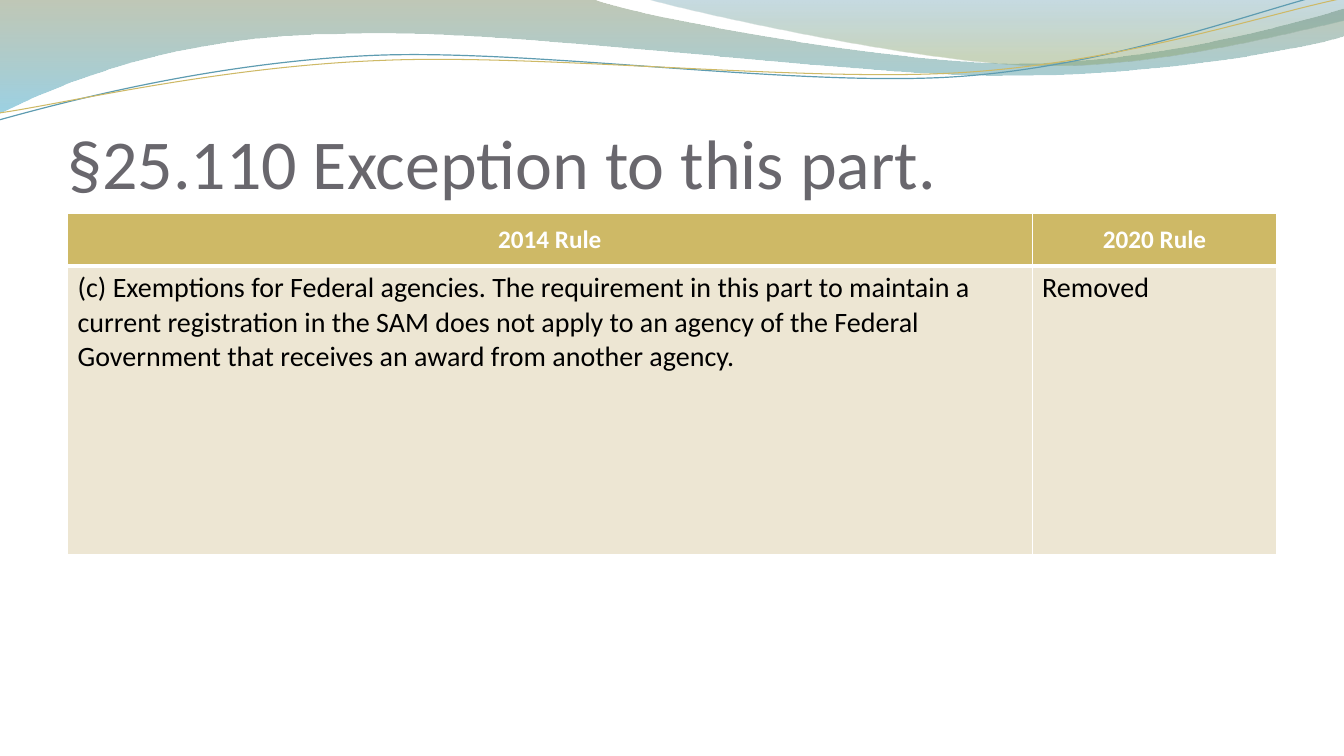
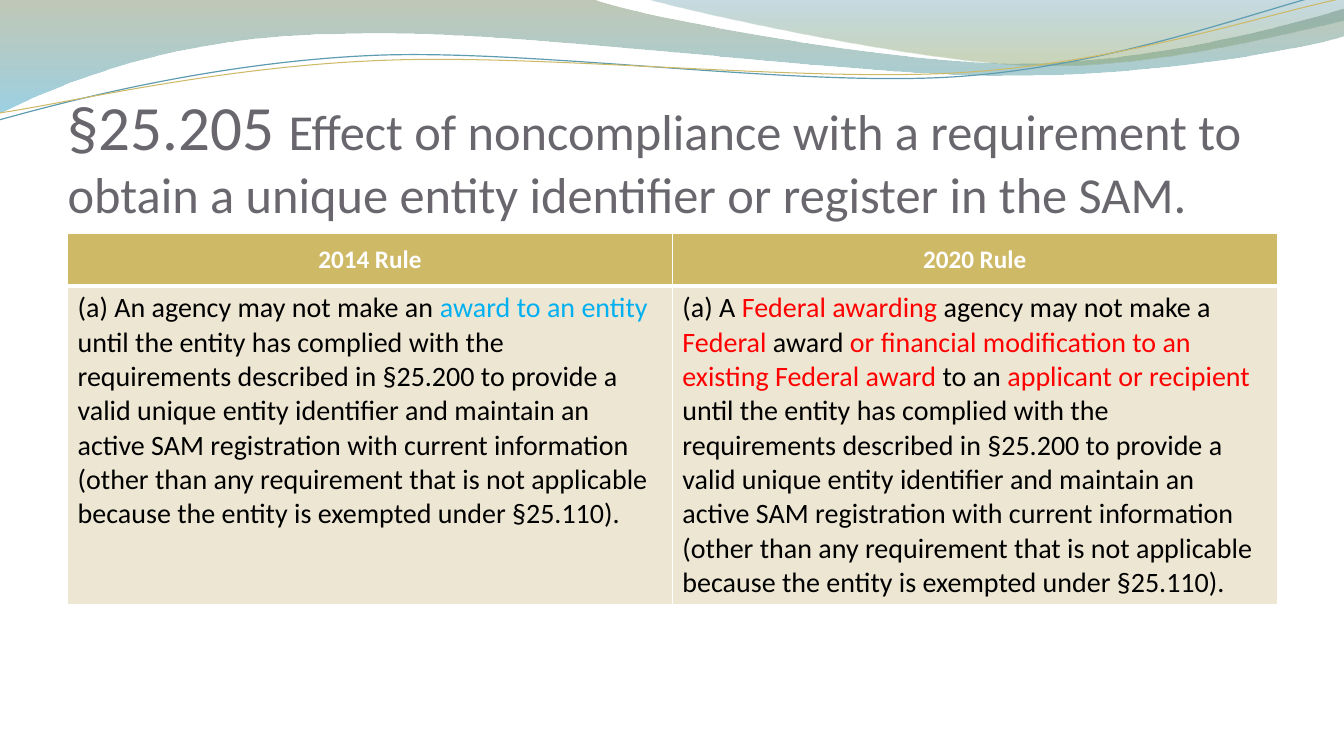
from dataclasses import dataclass
from itertools import islice

from lxml import etree
from pptx import Presentation
from pptx.dml.color import RGBColor
from pptx.enum.text import MSO_ANCHOR, MSO_AUTO_SIZE, PP_ALIGN
from pptx.oxml.ns import qn
from pptx.util import Inches, Pt

TOP, MIDDLE, BOTTOM = MSO_ANCHOR.TOP, MSO_ANCHOR.MIDDLE, MSO_ANCHOR.BOTTOM
LEFT, CENTER = PP_ALIGN.LEFT, PP_ALIGN.CENTER
NO_FIT = MSO_AUTO_SIZE.NONE
TITLE_ONLY = 5


@dataclass(frozen=True)
class Theme:
    """Colours, font and type sizes of the deck."""
    font: str = "Calibri"
    title: str = "69676D"
    gold: str = "CEB966"
    teal: str = "5E9CB1"
    sand: str = "EDE6D3"
    white: str = "FFFFFF"
    black: str = "000000"
    old: str = "00B0F0"
    new: str = "FF0000"
    title_size: int = 50
    long_number_size: int = 45
    long_title_size: int = 36
    head_size: int = 18
    body_size: int = 20


T = Theme()

BANDS = [
    ([(0, -0.01), (5.87, -0.01), (6.34, 0.17, 8.85, 0.63, 10.11, 0.63),
      (11.38, 0.63, 12.78, 0.26, 13.33, 0.09), (13.35, 0.36),
      (13.11, 0.44, 11.6, 0.76, 9.94, 0.75), (8.29, 0.75, 5.09, 0.28, 3.43, 0.34),
      (1.72, 0.35, 0.61, 0.83, -0.01, 1.13), (0, -0.01)],
     [(0, "74855E", 45), (1, "4AACCE", 55)]),
    ([(6.39, -0.01), (6.79, 0.11, 9.09, 0.62, 10.25, 0.65),
      (11.41, 0.69, 12.82, 0.32, 13.33, 0.21), (13.33, 0), (6.39, -0.01)],
     [(0, "45889F", 30), (0.8, "8AA36D", 45)]),
]
WAVES = [
    ([(-0.01, 1.19), (0.64, 1.01, 2.11, 0.62, 3.69, 0.55),
      (5.27, 0.48, 7.9, 0.87, 9.5, 0.76), (11.1, 0.65, 12.52, 0.08, 13.31, -0.1)],
     T.teal, 0.85),
    ([(0, 1.12), (0.63, 1.03, 2.18, 0.66, 3.78, 0.6),
      (5.37, 0.53, 7.96, 0.82, 9.55, 0.72), (11.15, 0.62, 12.55, 0.14, 13.34, -0.02)],
     T.gold, 0.75),
]

SHARED_RULE = ("until the entity has complied with the requirements described in §25.200 "
               "to provide a valid unique entity identifier and maintain an")
SHARED_END = ("active SAM registration with current information (other than any requirement "
              "that is not applicable because the entity is exempted under §25.110).")

SLIDES = [
    {"title": [("§25.110 Exception to this part.", T.title_size)],
     "title_top": 0.77, "table_top": 2.12, "cols": (9.57, 2.43), "body_height": 2.86,
     "rules": [
         [[("(c) Exemptions for Federal agencies. The requirement in this part to maintain a "
            "current registration in the SAM does not apply to an agency of the Federal "
            "Government that receives an award from another agency.", T.black)]],
         [[("Removed ", T.black)]]]},
    {"title": [("§25.205 ", T.long_number_size),
               ("Effect of noncompliance with a requirement to obtain a unique entity "
                "identifier or register in the SAM.", T.long_title_size)],
     "title_top": 0.97, "table_top": 2.32, "cols": (6, 6), "body_height": 3.1,
     "rules": [
         [[("(a) An agency may not make an ", T.black), ("award to an entity ", T.old),
           (f"{SHARED_RULE} {SHARED_END}", T.black)]],
         [[("(a) A ", T.black), ("Federal awarding ", T.new),
           ("agency may not make a ", T.black), ("Federal ", T.new), ("award ", T.black),
           ("or financial modification to an existing Federal award ", T.new),
           ("to an ", T.black), ("applicant or recipient ", T.new),
           (SHARED_RULE, T.black)],
          [(SHARED_END, T.black)]]]},
]


def set_format(obj, fmt):
    """Set each attribute of obj named in fmt."""
    for name, value in fmt.items():
        setattr(obj, name, value)


def add_run(p, text, color, size, bold=False):
    """Add a formatted run to a paragraph."""
    r = p.add_run()
    r.text = text
    set_format(r.font, {"name": T.font, "size": Pt(size), "bold": bold})
    r.font.color.rgb = RGBColor.from_string(color)


def bend_segments(sp, steps):
    """Join the three segments of each curved step into one cubic curve."""
    nodes = iter(list(sp.element.iter(qn("a:lnTo"))))
    for step in steps:
        group = list(islice(nodes, len(step) // 2))
        if len(group) == 3:
            curve = etree.Element(qn("a:cubicBezTo"))
            group[0].addprevious(curve)
            for node in group:
                curve.append(node[0])
                node.getparent().remove(node)


def add_outline(s, path, close):
    """Add a freeform of lines and cubic curves without shadow."""
    points = [(Inches(x), Inches(y)) for step in path for x, y in zip(step[::2], step[1::2])]
    builder = s.shapes.build_freeform(*points[0])
    builder.add_line_segments(points[1:], close=close)
    sp = builder.convert_to_shape()
    bend_segments(sp, path[1:])
    sp.shadow.inherit = False
    return sp


def add_band(s, path, stops):
    """Add a closed band with a translucent vertical gradient."""
    sp = add_outline(s, path, True)
    sp.line.fill.background()
    sp.fill.gradient()
    sp.fill.gradient_angle = 270
    for stop, (position, color, _) in zip(sp.fill.gradient_stops, stops):
        stop.position = position
        stop.color.rgb = RGBColor.from_string(color)
    colors = sp.element.spPr.iter(qn("a:srgbClr"))
    for node, (_, _, opacity) in zip(colors, stops):
        etree.SubElement(node, qn("a:alpha"), val=str(opacity * 1000))
    return sp


def add_wave(s, path, color, width):
    """Add a thin open curve."""
    sp = add_outline(s, path, False)
    sp.fill.background()
    sp.line.width = Pt(width)
    sp.line.color.rgb = RGBColor.from_string(color)
    return sp


def add_header(s, layout):
    """Draw the wave header and place it on the layout behind its placeholders."""
    parts = [add_band(s, *band) for band in BANDS] + [add_wave(s, *wave) for wave in WAVES]
    for i, sp in enumerate(parts):
        layout.shapes.element.insert(2 + i, sp.element)


def add_title(s, box, runs):
    """Place and fill the title placeholder."""
    sp = s.shapes.title
    set_format(sp, dict(zip(("left", "top", "width", "height"), map(Inches, box))))
    tf = sp.text_frame
    set_format(tf, {"auto_size": NO_FIT, "word_wrap": True, "vertical_anchor": BOTTOM,
                    "margin_left": 0, "margin_top": Inches(0.05),
                    "margin_right": 0, "margin_bottom": 0})
    p = tf.paragraphs[0]
    p.alignment = LEFT
    for text, size in runs:
        add_run(p, text, T.title, size)


def add_borders(cell, widths):
    """Draw white cell borders with the given widths by side."""
    tc_pr = cell._tc.get_or_add_tcPr()
    for side in "LRTB":
        ln = etree.SubElement(tc_pr, qn(f"a:ln{side}"), w=str(Pt(widths.get(side, 1))))
        fill = etree.SubElement(ln, qn("a:solidFill"))
        etree.SubElement(fill, qn("a:srgbClr"), val=T.white)


def fill_cell(cell, paragraphs, fill, thick, anchor, align, size, bold):
    """Fill one table cell with formatted paragraphs."""
    add_borders(cell, {thick: 3})
    cell.fill.solid()
    cell.fill.fore_color.rgb = RGBColor.from_string(fill)
    cell.vertical_anchor = anchor
    tf = cell.text_frame
    for i, runs in enumerate(paragraphs):
        p = tf.add_paragraph() if i else tf.paragraphs[0]
        p.alignment = align
        for text, color in runs:
            add_run(p, text, color, size, bold)


def add_rules(s, left, top, cols, body_height, rules):
    """Add the table comparing the two rules."""
    heights = (0.52, body_height)
    table = s.shapes.add_table(2, 2, Inches(left), Inches(top),
                               Inches(sum(cols)), Inches(sum(heights))).table
    table.horz_banding = False
    for col, width in zip(table.columns, cols):
        col.width = Inches(width)
    for row, height in zip(table.rows, heights):
        row.height = Inches(height)
    for i, (year, rule) in enumerate(zip((2014, 2020), rules)):
        fill_cell(table.cell(0, i), [[(f"{year} Rule", T.white)]], T.gold, "B",
                  MIDDLE, CENTER, T.head_size, True)
        fill_cell(table.cell(1, i), rule, T.sand, "T", TOP, LEFT, T.body_size, False)


def add_rule_slide(prs, layout, content):
    """Add a slide with a title and a rule comparison."""
    s = prs.slides.add_slide(layout)
    left, width = 0.67, 12
    add_title(s, (left, content["title_top"], width, 1.25), content["title"])
    add_rules(s, left, content["table_top"], content["cols"],
              content["body_height"], content["rules"])
    return s


def main():
    """Build and save the deck."""
    prs = Presentation()
    set_format(prs, {"slide_width": Inches(40 / 3), "slide_height": Inches(7.5)})
    layout = prs.slide_layouts[TITLE_ONLY]
    slides = [add_rule_slide(prs, layout, content) for content in SLIDES]
    add_header(slides[0], layout)
    prs.save("out.pptx")


if __name__ == "__main__":
    main()
